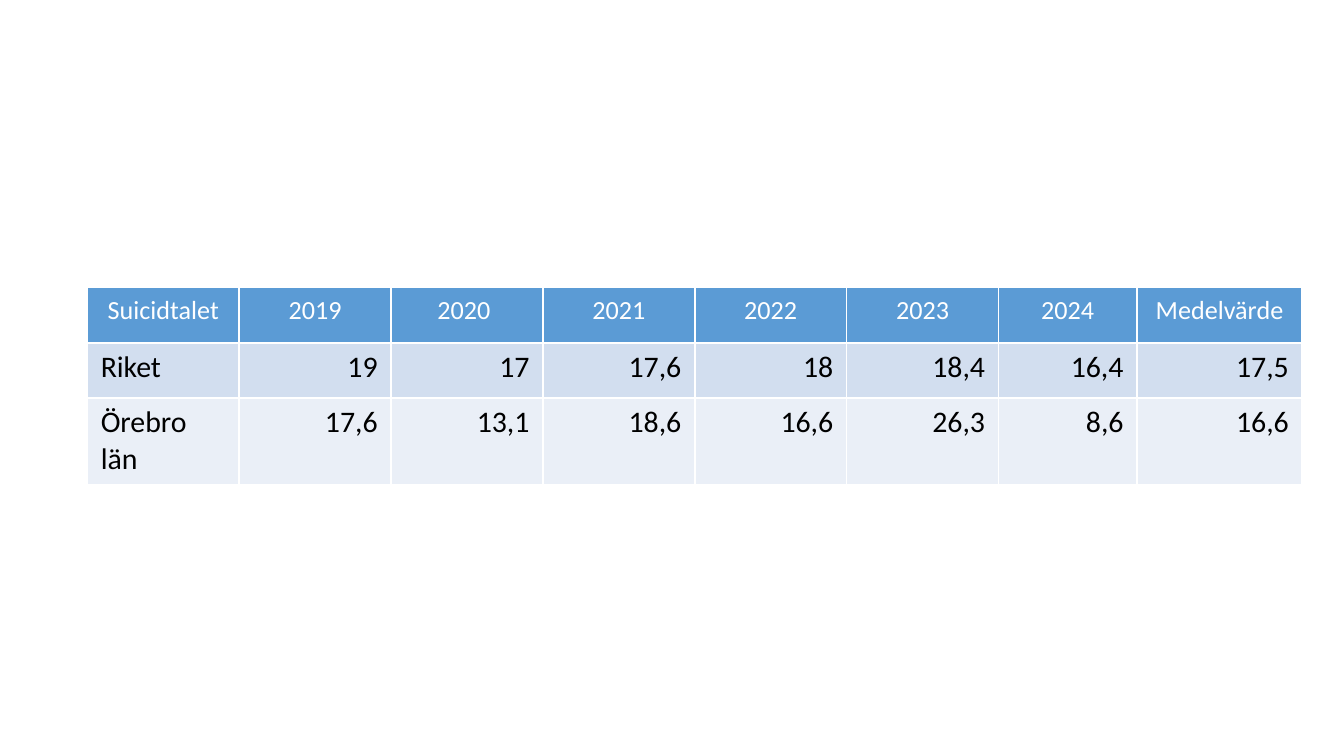
from dataclasses import dataclass

from lxml.etree import SubElement
from pptx import Presentation
from pptx.dml.color import RGBColor
from pptx.enum.text import PP_ALIGN
from pptx.oxml.ns import qn
from pptx.util import Inches, Pt


@dataclass(frozen=True)
class Theme:
    font: str = "Calibri"
    white: str = "FFFFFF"
    black: str = "000000"
    head: str = "5B9BD5"
    bands: tuple = ("D2DEEF", "EAEFF7")
    small: int = 14
    large: int = 16
    edge: int = 1


THEME = Theme()

ROWS = [
    ["Suicidtalet", "2019", "2020 ", "2021", "2022", "2023", "2024", "Medelvärde"],
    ["Riket", "19", "17", "17,6", "18", "18,4", "16,4", "17,5"],
    ["Örebro län", "17,6", "13,1", "18,6", "16,6", "26,3", "8,6", "16,6"],
]
WIDTHS = [1.13] * 6 + [1.03, 1.23]
HEIGHT = 0.41
WIDE = 10


def apply(item, form):
    for name, value in form.items():
        setattr(item, name, value)


def add_edges(cell):
    """Draw the four cell borders; borders must come before the fill."""
    props = cell._tc.get_or_add_tcPr()
    for side in "LRTB":
        line = SubElement(props, qn(f"a:ln{side}"), w=str(Pt(THEME.edge)))
        fill = SubElement(line, qn("a:solidFill"))
        SubElement(fill, qn("a:srgbClr"), val=THEME.white)


def fill_cell(cell, text, fill, ink, size, align):
    add_edges(cell)
    cell.fill.solid()
    cell.fill.fore_color.rgb = RGBColor.from_string(fill)
    cell.text = text
    para = cell.text_frame.paragraphs[0]
    para.alignment = align
    font = para.runs[0].font
    apply(font, {"name": THEME.font, "size": Pt(size), "bold": False})
    font.color.rgb = RGBColor.from_string(ink)


def add_grid(slide, left, top):
    frame = slide.shapes.add_table(
        len(ROWS), len(WIDTHS), Inches(left), Inches(top),
        Inches(sum(WIDTHS)), Inches(HEIGHT * len(ROWS)))
    table = frame.table
    for col, width in zip(table.columns, WIDTHS):
        col.width = Inches(width)

    for r, row in enumerate(ROWS):
        table.rows[r].height = Inches(HEIGHT)
        for c, text in enumerate(row):
            cell = table.cell(r, c)
            if r == 0:
                fill_cell(cell, text, THEME.head, THEME.white, THEME.small,
                          PP_ALIGN.CENTER)
            else:
                align = PP_ALIGN.RIGHT if c else PP_ALIGN.LEFT
                fill_cell(cell, text, THEME.bands[r - 1], THEME.black,
                          THEME.large, align)


def main():
    # Widescreen page, 16:9
    deck = Presentation()
    apply(deck, {"slide_width": Inches(WIDE), "slide_height": Inches(WIDE * 9 / 16)})
    slide = deck.slides.add_slide(deck.slide_layouts[6])

    # Rates by year
    add_grid(slide, 0.65, 2.14)
    deck.save("out.pptx")


if __name__ == "__main__":
    main()
